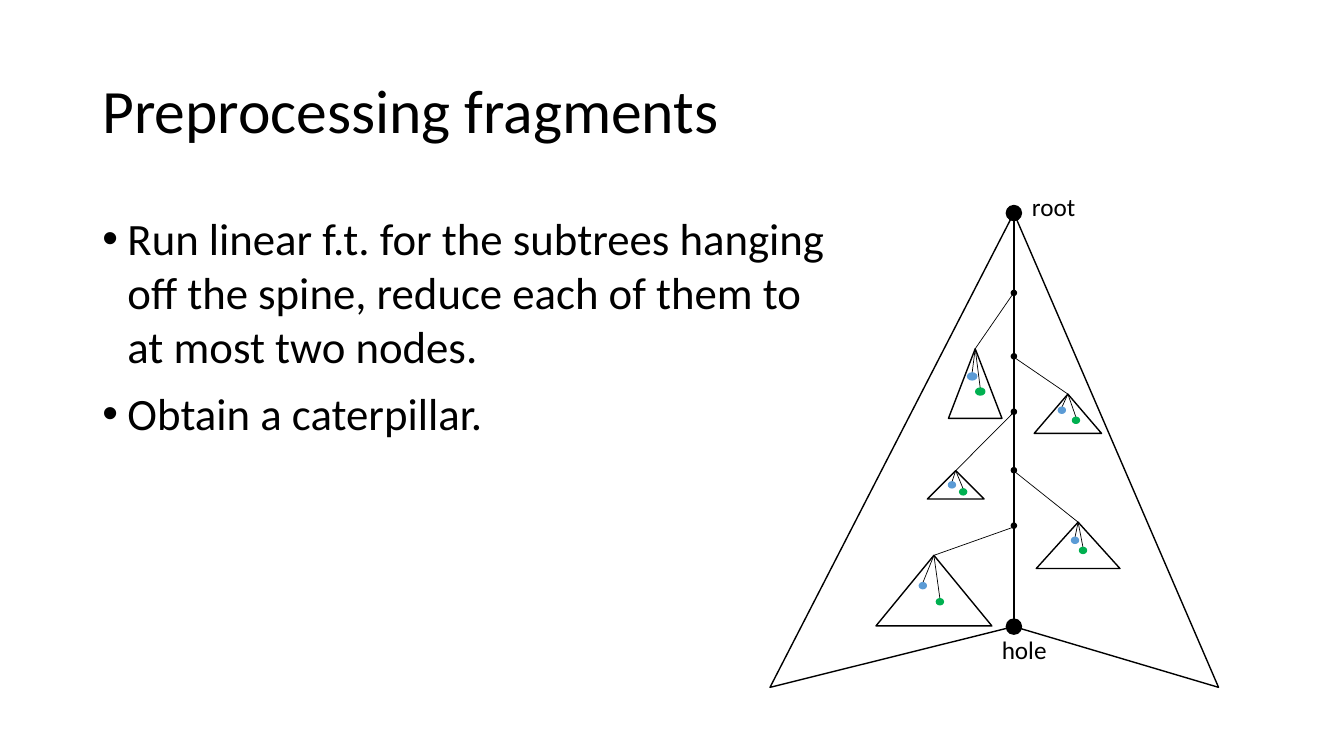
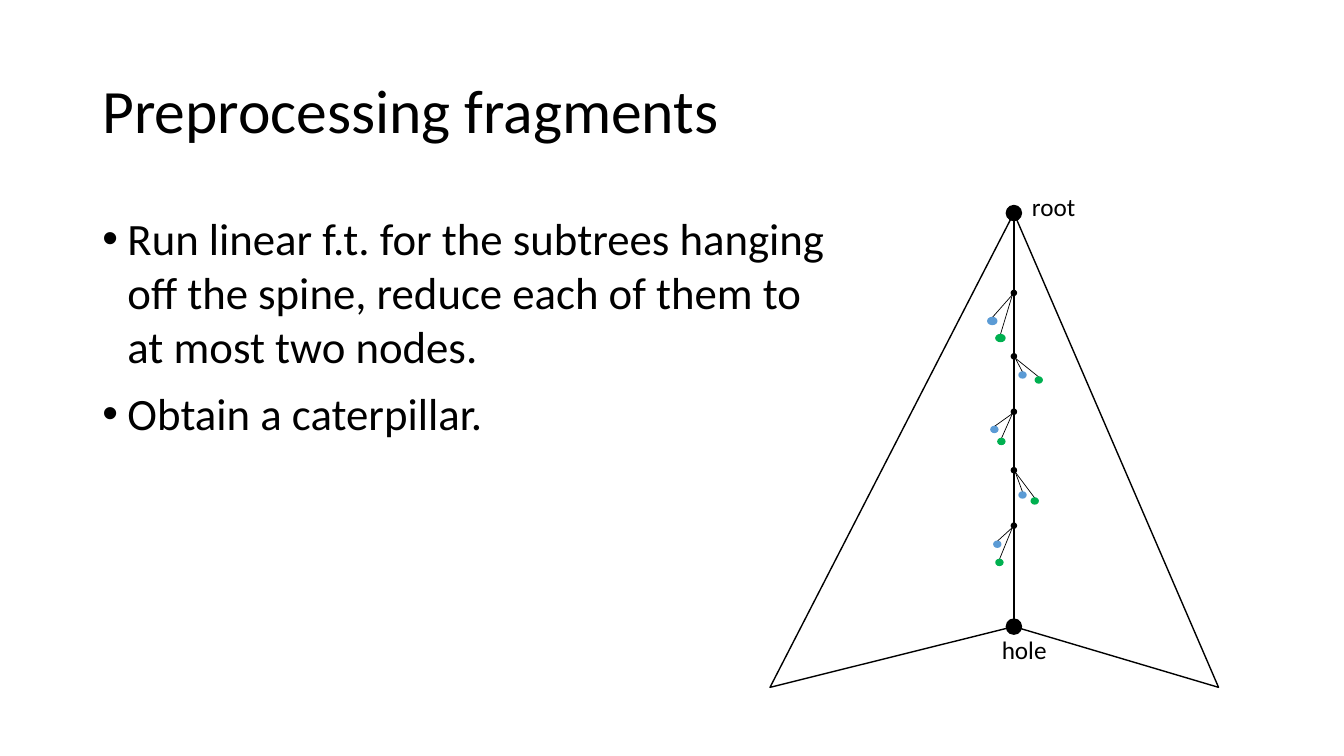
from typing import NamedTuple

from lxml.etree import SubElement
from pptx import Presentation
from pptx.dml.color import RGBColor
from pptx.enum.shapes import MSO_CONNECTOR as Connector, MSO_SHAPE as Shape
from pptx.enum.text import MSO_ANCHOR as Anchor
from pptx.oxml.ns import qn
from pptx.util import Pt

COLORS = {
    "ink": "000000",
    "paper": "FFFFFF",
    "blue": "5B9BD5",
    "green": "00B050",
}
FONT = "Calibri"
TITLE = "Preprocessing fragments"
BULLETS = [
    "Run linear f.t. for the subtrees hanging off the spine, "
    "reduce each of them to at most two nodes.",
    "Obtain a caterpillar.",
]
SPINE_X = 724.2
ROOT_Y = 152.2
HOLE_Y = 447.6
CORNER_Y = 491
CORNER_LEFT, CORNER_RIGHT = 550, 870.4
END_SIZE = (10.8, 10.8)
JOINT_SIZE = (3.6, 3.6)
SMALL_LEAF = (5, 4.3)
LARGE_LEAF = (6.5, 5)
LEAF_COLORS = ("blue", "green")


class Subtree(NamedTuple):
    joint_y: float
    side: int
    triangle: tuple
    hanging: tuple
    reduced: tuple
    leaf_size: tuple = SMALL_LEAF

    @property
    def joint(self):
        return SPINE_X + self.side, self.joint_y + 1.3

    @property
    def apex(self):
        left, top, width, _ = self.triangle
        return left + width / 2, top


SUBTREES = [
    Subtree(209.2, -1, (677.5, 249.1, 38.2, 49.7),
            ((694.4, 266.4), (700.2, 277.2)),
            ((708.8, 226.8), (714.6, 239)), LARGE_LEAF),
    Subtree(254.5, 1, (738.7, 281.5, 48.2, 28.1),
            ((758.5, 290.9), (768.6, 298.1)),
            ((730.4, 265.7), (742, 269.3))),
    Subtree(294.1, -1, (662.4, 336.2, 40.5, 20.2),
            ((680, 344.2), (688, 349.2)),
            ((710.3, 304.6), (715.3, 313.2))),
    Subtree(335.9, 1, (740.2, 373, 59.8, 33.1),
            ((767.9, 383.8), (773.6, 391)),
            ((730.4, 351.4), (739.1, 355.7))),
    Subtree(375.5, -1, (625.7, 396.7, 82.8, 50.4),
            ((659.2, 416.2), (671.4, 427.7)),
            ((712.4, 386.6), (713.9, 399.6))),
]


def rgb(name):
    return RGBColor.from_string(COLORS[name])


def paint(shape, fill, line):
    shape.shadow.inherit = False
    shape.fill.solid()
    shape.fill.fore_color.rgb = rgb(fill)
    shape.line.color.rgb = rgb(line)
    shape.line.width = Pt(1)


def add_dot(page, x, y, size, color):
    width, height = size
    dot = page.shapes.add_shape(Shape.OVAL, Pt(x - width / 2), Pt(y - height / 2),
                                Pt(width), Pt(height))
    paint(dot, color, color)


def add_line(page, start, end, weight):
    line = page.shapes.add_connector(Connector.STRAIGHT, *map(Pt, start + end))
    line.line.color.rgb = rgb("ink")
    line.line.width = Pt(weight)
    SubElement(line._element.spPr, qn("a:effectLst"))


def add_text(page, area, texts, size, anchor=Anchor.TOP, wrap=True):
    box = page.shapes.add_textbox(*map(Pt, area))
    frame = box.text_frame
    frame.word_wrap = wrap
    frame.vertical_anchor = anchor
    for index, text in enumerate(texts):
        para = frame.add_paragraph() if index else frame.paragraphs[0]
        span = para.add_run()
        span.text = text
        span.font.name = FONT
        span.font.size = Pt(size)
        span.font.color.rgb = rgb("ink")
    return frame.paragraphs


def add_bullets(page, area, texts, size):
    for para in add_text(page, area, texts, size):
        para.space_before = Pt(10)
        props = para._p.get_or_add_pPr()
        props.set("marL", str(Pt(18)))
        props.set("indent", str(-Pt(18)))
        SubElement(props, qn("a:buFont"), typeface="Arial")
        SubElement(props, qn("a:buChar"), char="•")


def add_fragment(page):
    corners = [(CORNER_LEFT, CORNER_Y), (SPINE_X, HOLE_Y), (CORNER_RIGHT, CORNER_Y)]
    builder = page.shapes.build_freeform(Pt(SPINE_X), Pt(ROOT_Y))
    builder.add_line_segments([(Pt(x), Pt(y)) for x, y in corners], close=True)
    paint(builder.convert_to_shape(), "paper", "ink")
    add_line(page, (SPINE_X, ROOT_Y), (SPINE_X, HOLE_Y), 1.25)
    for y in (ROOT_Y, HOLE_Y):
        add_dot(page, SPINE_X, y, END_SIZE, "ink")
    for subtree in SUBTREES:
        add_dot(page, SPINE_X, subtree.joint_y, JOINT_SIZE, "ink")
    add_text(page, (730, 133.2, 46, 29), ["root"], 18, wrap=False)
    add_text(page, (708.5, 449.3, 52.5, 29), ["hole"], 18, wrap=False)


def add_leaves(page, parent, leaves, size):
    for leaf in leaves:
        add_line(page, parent, leaf, 0.5)
    for (x, top), color in zip(leaves, LEAF_COLORS):
        add_dot(page, x, top + size[1] / 2, size, color)


def add_hanging_subtree(page, subtree):
    triangle = page.shapes.add_shape(Shape.ISOSCELES_TRIANGLE,
                                     *map(Pt, subtree.triangle))
    paint(triangle, "paper", "ink")
    add_line(page, subtree.joint, subtree.apex, 0.5)
    add_leaves(page, subtree.apex, subtree.hanging, subtree.leaf_size)


def add_reduced_subtree(page, subtree):
    add_leaves(page, subtree.joint, subtree.reduced, subtree.leaf_size)


def add_page(deck, add_subtree):
    page = deck.slides.add_slide(deck.slide_layouts[6])
    title = add_text(page, (66, 28.8, 828, 104.4), [TITLE], 44, Anchor.MIDDLE)
    title[0].line_spacing = 0.9
    add_bullets(page, (66, 147, 546, 338), BULLETS, 32)
    add_fragment(page)
    for subtree in SUBTREES:
        add_subtree(page, subtree)


def main():
    deck = Presentation()
    deck.slide_width, deck.slide_height = Pt(960), Pt(540)
    for add_subtree in (add_hanging_subtree, add_reduced_subtree):
        add_page(deck, add_subtree)
    deck.save("out.pptx")


if __name__ == "__main__":
    main()
